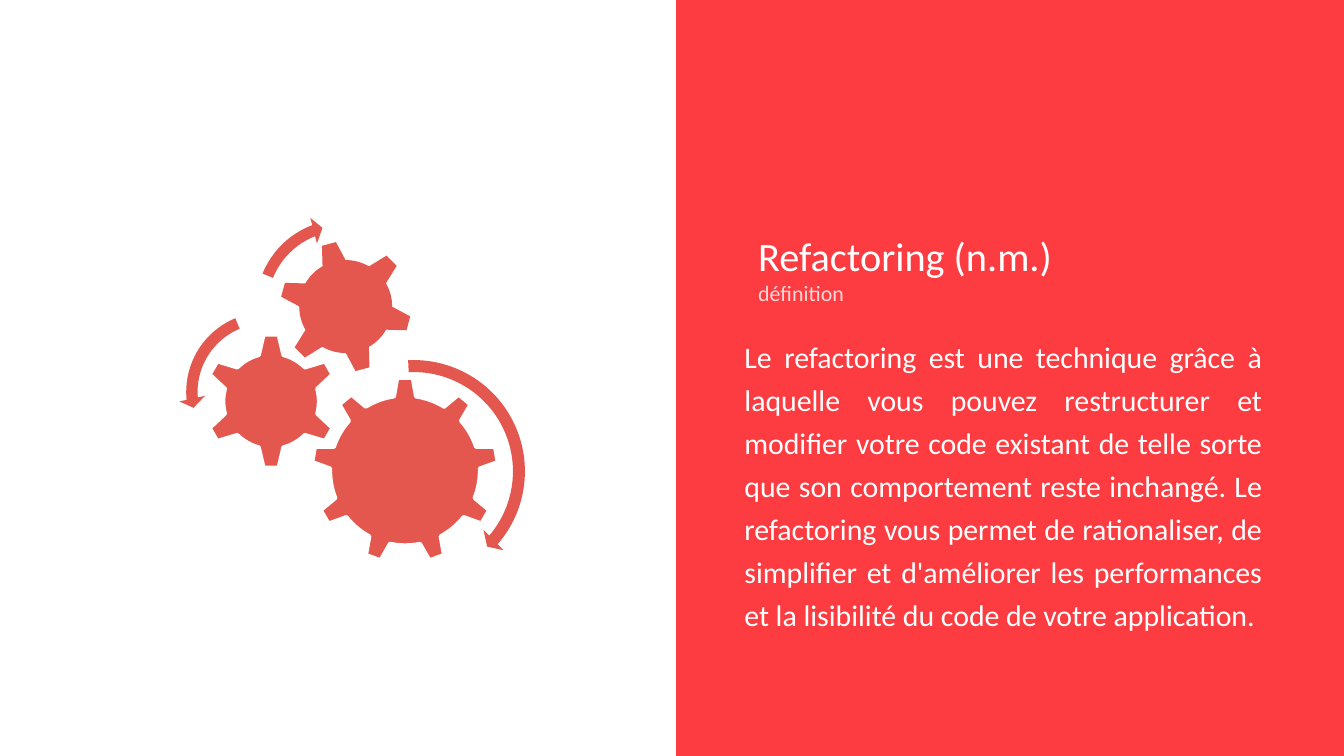
from pptx import Presentation
from pptx import util as u
from pptx.dml.color import RGBColor
from pptx.enum import shapes, text

COLORS = {"panel": "FC3C40", "gear": "E4574E", "white": "FFFFFF", "subtitle": "FED8D9"}
S = shapes.MSO_SHAPE

# shape, left, top, size (cm), rotation, outlined, adjustments
GEARS = [
    (S.GEAR_9, 2.51, 3.12, 3.53, 0, True, []),
    (S.GEAR_6, 0.46, 2.29, 2.57, 0, True, []),
    (S.GEAR_6, 1.9, 0.53, 2.51, 345, False, []),
    (S.CIRCULAR_ARROW, 2.18, 2.64, 4.52, 0, False, [0.05, 2.99, 24.44, 160.28, 0.06]),
    (S.LEFT_CIRCULAR_ARROW, 0, 1.75, 3.3, 0, False, [0.065, 4.3, 104.89, 148.38, 0.075]),
    (S.CIRCULAR_ARROW, 1.32, 0, 3.56, 27, False, [0.06, 3.94, 133.14, 105.08, 0.07]),
]
DEFINITION = (
    "Le refactoring est une technique grâce à laquelle vous pouvez restructurer et "
    "modifier votre code existant de telle sorte que son comportement reste inchangé. "
    "Le refactoring vous permet de rationaliser, de simplifier et d'améliorer les "
    "performances et la lisibilité du code de votre application."
)


def rgb(name):
    return RGBColor.from_string(COLORS[name])


def add_shape(s, kind, box, fill, outline=None):
    sp = s.shapes.add_shape(kind, *map(u.Cm, box))
    sp.shadow.inherit = False
    sp.fill.solid()
    sp.fill.fore_color.rgb = rgb(fill)
    if outline:
        sp.line.color.rgb = rgb(outline)
        sp.line.width = u.Pt(2)
    else:
        sp.line.fill.background()
    return sp


def add_text(s, box, runs, **paragraph_format):
    """Add one paragraph; runs of (text, size, color) are parted by line breaks."""
    tf = s.shapes.add_textbox(*map(u.Cm, box)).text_frame
    tf.word_wrap = True
    p = tf.paragraphs[0]
    for name, value in paragraph_format.items():
        setattr(p, name, value)
    for i, (words, size, color) in enumerate(runs):
        if i:
            p.add_line_break()
        r = p.add_run()
        r.text = words
        for name, value in {"name": "Calibri", "size": u.Pt(size)}.items():
            setattr(r.font, name, value)
        r.font.color.rgb = rgb(color)


def add_gears(s, left, top):
    for kind, x, y, size, rotation, outlined, adjustments in GEARS:
        box = (left + x, top + y, size, size)
        sp = add_shape(s, kind, box, "gear", "white" if outlined else None)
        sp.rotation = rotation
        for i, value in enumerate(adjustments):
            sp.adjustments[i] = value


def add_definition_panel(s, left, top, width, height):
    add_shape(s, S.RECTANGLE, (left, top, width, height), "panel")
    add_text(s, (left + 1.3, top + 4.24, 8, 1.45),
             [("Refactoring (n.m.)", 21.6, "white"), ("définition", 11.7, "subtitle")])
    add_text(s, (left + 1.04, top + 6.15, 10.29, 6.81), [(DEFINITION, 16, "white")],
             alignment=text.PP_ALIGN.JUSTIFY, line_spacing=1.2)


def main():
    prs = Presentation()
    prs.slide_width, prs.slide_height = u.Cm(25.4), u.Cm(14.29)
    s = prs.slides.add_slide(prs.slide_layouts[6])
    add_definition_panel(s, 12.78, 0, 12.62, 14.33)
    add_gears(s, 3.38, 4.01)
    prs.save("out.pptx")


if __name__ == "__main__":
    main()
